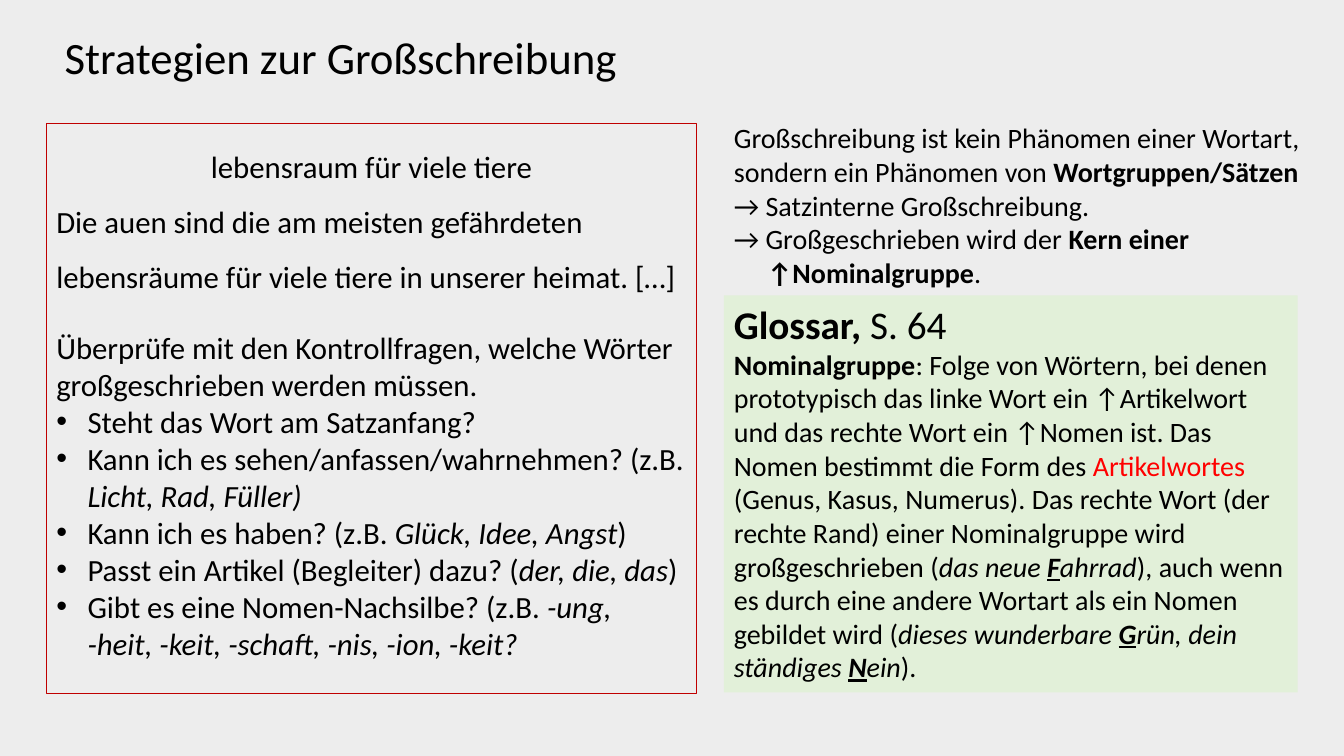
from dataclasses import dataclass

from lxml.etree import SubElement
from pptx import Presentation
from pptx.dml.color import RGBColor
from pptx.enum.shapes import MSO_SHAPE
from pptx.enum.text import MSO_ANCHOR, MSO_AUTO_SIZE, PP_ALIGN
from pptx.oxml.ns import qn
from pptx.util import Inches, Pt


@dataclass(frozen=True)
class Theme:
    font: str = "Calibri"
    ground: RGBColor = RGBColor(0xED, 0xED, 0xED)
    ink: RGBColor = RGBColor(0, 0, 0)
    alert: RGBColor = RGBColor(0xFF, 0, 0)
    frame: RGBColor = RGBColor(0xC0, 0, 0)
    panel: RGBColor = RGBColor(0xE2, 0xF0, 0xD9)
    title: int = 32
    head: int = 28
    task: int = 22
    body: int = 20


THEME = Theme()

# Run styles: b bold, i italic, u underlined, r red
QUESTIONS = [
    ["Steht das Wort am Satzanfang?"],
    ["Kann ich es sehen/anfassen/wahrnehmen? (z.B. ", ("Licht, Rad, Füller)", "i")],
    ["Kann ich es haben? (z.B. ", ("Glück, Idee, Angst", "i"), ")"],
    ["Passt ein Artikel (Begleiter) dazu? (", ("der, die, das", "i"), ")"],
    ["Gibt es eine Nomen-Nachsilbe? (z.B. ",
     ("-ung, \n-heit, -keit, -schaft, -nis, -ion, -keit?", "i")],
]
CLAIM = ["Großschreibung ist kein Phänomen einer Wortart, sondern ein Phänomen von ",
         ("Wortgruppen/Sätzen", "b")]
RESULTS = [
    ["→ Satzinterne Großschreibung."],
    ["→ Großgeschrieben wird der ", ("Kern einer \n↑Nominalgruppe", "b"), "."],
]
ENTRY = [
    ("Nominalgruppe", "b"),
    ": Folge von Wörtern, bei denen prototypisch das linke Wort ein ↑Artikelwort "
    "und das rechte Wort ein ↑Nomen ist. Das Nomen bestimmt die Form des ",
    ("Artikelwortes", "r"),
    " (Genus, Kasus, Numerus). Das rechte Wort (der rechte Rand) einer "
    "Nominalgruppe wird großgeschrieben (",
    ("das neue ", "i"), ("F", "biu"), ("ahrrad", "i"),
    "), auch wenn es durch eine andere Wortart als ein Nomen gebildet wird (",
    ("dieses wunderbare ", "i"), ("G", "biu"), ("rün, dein ständiges ", "i"),
    ("N", "biu"), ("ein", "i"), ").",
]


def prepare(frame, anchor=MSO_ANCHOR.TOP):
    frame.word_wrap = True
    frame.auto_size = MSO_AUTO_SIZE.NONE
    frame.vertical_anchor = anchor
    return frame


def write(frame, parts, size, first=False, spacing=1.0):
    """Add one paragraph made of plain strings and (text, style) pairs."""
    para = frame.paragraphs[0] if first else frame.add_paragraph()
    para.alignment = PP_ALIGN.LEFT
    para.line_spacing = spacing
    para.font.name = THEME.font
    para.font.size = Pt(size)
    para.font.color.rgb = THEME.ink
    for part in parts:
        text, style = (part, "") if isinstance(part, str) else part
        for row, line in enumerate(text.split("\n")):
            if row:
                para.add_line_break()
            run = para.add_run()
            run.text = line
            if "b" in style:
                run.font.bold = True
            if "i" in style:
                run.font.italic = True
            if "u" in style:
                run.font.underline = True
            if "r" in style:
                run.font.color.rgb = THEME.alert
    return para


def hang(para, depth, bullet=None):
    props = para._p.get_or_add_pPr()
    props.set("marL", str(Inches(depth)))
    props.set("indent", str(-Inches(depth)))
    if bullet:
        SubElement(props, qn("a:buFont")).set("typeface", "Arial")
        SubElement(props, qn("a:buChar")).set("char", bullet)


def add_box(slide, box, fill=None, line=None):
    shape = slide.shapes.add_shape(MSO_SHAPE.RECTANGLE, *map(Inches, box))
    shape.shadow.inherit = False
    if fill is None:
        shape.fill.background()
    else:
        shape.fill.solid()
        shape.fill.fore_color.rgb = fill
    if line is None:
        shape.line.fill.background()
    else:
        shape.line.color.rgb = line
        shape.line.width = Pt(0.75)
    return prepare(shape.text_frame)


def add_title(slide, box, text):
    title = slide.shapes.title
    title.left, title.top, title.width, title.height = map(Inches, box)
    frame = prepare(title.text_frame, MSO_ANCHOR.MIDDLE)
    write(frame, [text], THEME.title, first=True, spacing=0.9)


def add_task(slide, box):
    frame = add_box(slide, box, line=THEME.frame)
    size = THEME.task
    head = write(frame, ["lebensraum für viele tiere"], size, first=True, spacing=1.5)
    head.alignment = PP_ALIGN.CENTER
    write(frame, ["Die auen sind die am meisten gefährdeten lebensräume "
                  "für viele tiere in unserer heimat. […]"], size, spacing=1.5)
    prompt = write(frame, ["Überprüfe mit den Kontrollfragen, welche Wörter "
                           "großgeschrieben werden müssen."], size)
    prompt.space_before = Pt(24)
    for parts in QUESTIONS:
        hang(write(frame, parts, size), 0.31, "•")


def add_claim(slide, box):
    frame = prepare(slide.shapes.add_textbox(*map(Inches, box)).text_frame)
    write(frame, CLAIM, THEME.body, first=True)
    for parts in RESULTS:
        hang(write(frame, parts, THEME.body), 0.33)


def add_entry(slide, box):
    frame = add_box(slide, box, fill=THEME.panel)
    write(frame, [("Glossar, ", "b"), "S. 64"], THEME.head, first=True)
    write(frame, ENTRY, THEME.body)


def main():
    deck = Presentation()
    deck.slide_width, deck.slide_height = Inches(13.33), Inches(7.5)
    slide = deck.slides.add_slide(deck.slide_layouts[5])
    slide.background.fill.solid()
    slide.background.fill.fore_color.rgb = THEME.ground

    add_title(slide, (0.54, 0.28, 11.81, 0.63), "Strategien zur Großschreibung")
    # Left: exercise with check questions
    add_task(slide, (0.46, 1.23, 6.45, 5.65))
    # Right: claim above the glossary entry
    add_claim(slide, (7.18, 1.15, 6.15, 1.78))
    add_entry(slide, (7.18, 2.93, 5.69, 3.94))
    deck.save("out.pptx")


if __name__ == "__main__":
    main()
